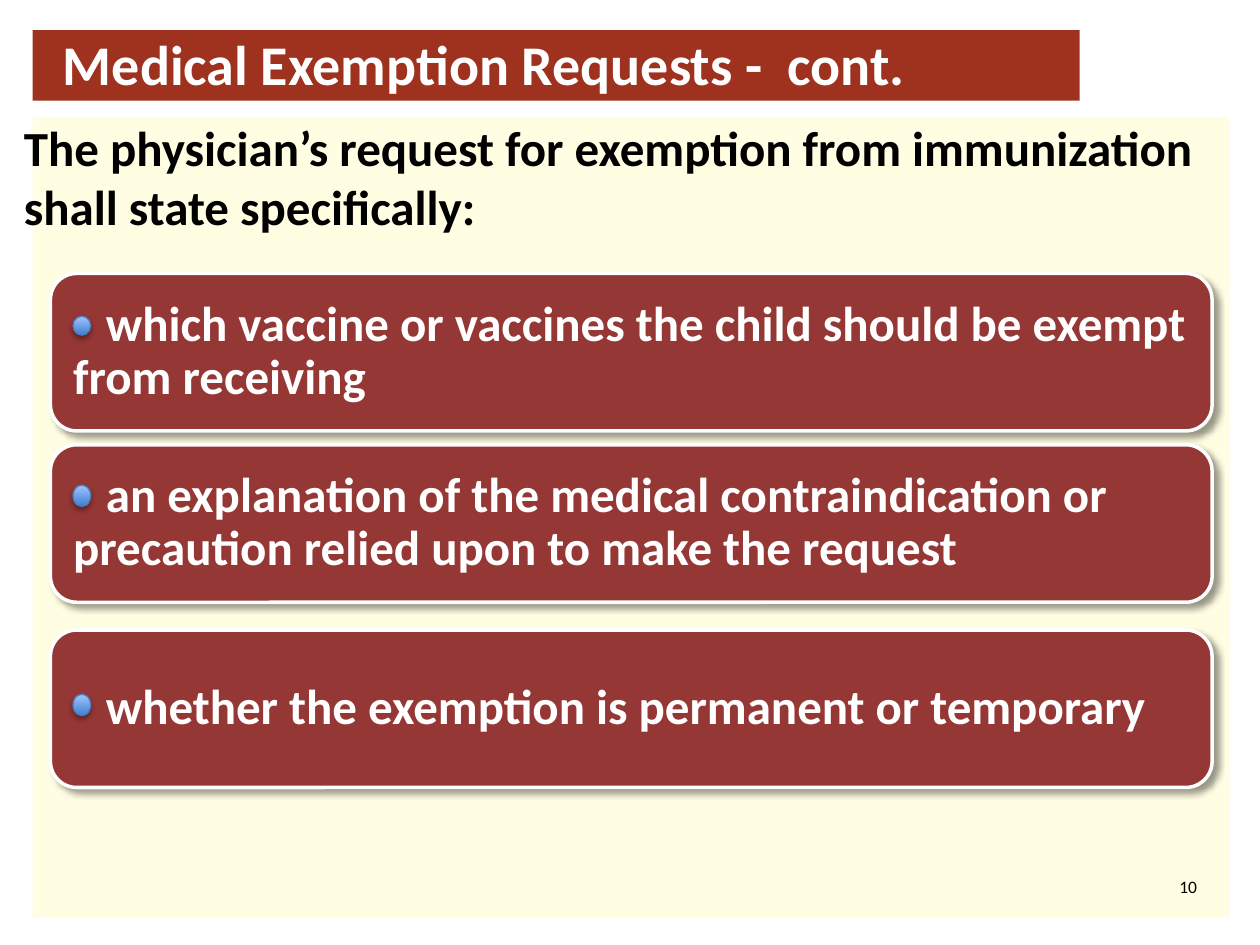
from lxml import etree
from pptx import Presentation
from pptx import util as u
from pptx.dml.color import RGBColor
from pptx.enum import shapes, text
from pptx.oxml.ns import qn

KIND = shapes.MSO_SHAPE
ANCHOR = text.MSO_ANCHOR
ALIGN = text.PP_ALIGN
WHITE, BLACK = "FFFFFF", "000000"
ITEMS = [
    (2.17, 2.51, 0.15, "which vaccine or vaccines the child should be exempt from receiving"),
    (3.53, 3.85, 0.17, "an explanation of the medical contraindication or precaution "
                       "relied upon to make the request"),
    (5, 5.51, 0.17, "whether the exemption is permanent or temporary"),
]


def paint(hue):
    """Return the colour for a hex string."""
    return RGBColor.from_string(hue)


def apply(thing, **vals):
    """Set each given value as an attribute of the thing."""
    for name, val in vals.items():
        setattr(thing, name, val)


def shade(shape, alpha, blur, dist, turn):
    """Give the shape a black outer shadow."""
    props = shape.shadow._element
    shape.shadow.inherit = False
    cast = etree.SubElement(
        props.find(qn("a:effectLst")), qn("a:outerShdw"),
        blurRad=str(u.Pt(blur)), dist=str(u.Pt(dist)),
        dir=str(turn * 60000), algn="ctr", rotWithShape="0")
    tone = etree.SubElement(cast, qn("a:srgbClr"), val=BLACK)
    etree.SubElement(tone, qn("a:alpha"), val=str(alpha * 1000))


def form(slide, kind, box, fill=None, line=None, width=0):
    """Add a preset shape with a flat fill and an optional line."""
    shape = slide.shapes.add_shape(kind, *map(u.Inches, box))
    shape.shadow.inherit = False
    if fill:
        shape.fill.solid()
        shape.fill.fore_color.rgb = paint(fill)
    if line:
        shape.line.color.rgb = paint(line)
        shape.line.width = u.Pt(width)
    else:
        shape.line.fill.background()
    return shape


def write(shape, words, size, hue, bold=True, pad=0, anchor=ANCHOR.TOP, **para):
    """Put one styled paragraph into the shape."""
    frame = shape.text_frame
    edge = u.Inches(pad)
    apply(frame, word_wrap=True, vertical_anchor=anchor, margin_left=edge,
          margin_top=edge, margin_right=edge, margin_bottom=edge)
    line = frame.paragraphs[0]
    apply(line, **{"alignment": ALIGN.LEFT, **para})
    run = line.add_run()
    run.text = words
    apply(run.font, name="Calibri", size=u.Pt(size), bold=bold)
    run.font.color.rgb = paint(hue)


def label(slide, box, *args, **vals):
    """Add a text box with one paragraph."""
    write(slide.shapes.add_textbox(*map(u.Inches, box)), *args, **vals)


def header(slide, box):
    """Draw the title bar and its title."""
    left, top, wide, high = box
    form(slide, KIND.RECTANGLE, box, "9F321E")
    label(slide, (left + 0.24, top + 0.01, wide - 0.28, high - 0.06),
          "Medical Exemption Requests -  cont.", 32, WHITE, anchor=ANCHOR.MIDDLE)


def panel(slide, box):
    """Draw the body panel with its lead text and page number."""
    left, top, wide, high = box
    form(slide, KIND.RECTANGLE, box, "FFFDE2")
    label(slide, (left - 0.07, top, wide + 0.06, high - 0.07),
          "The physician’s request for exemption from immunization "
          "shall state specifically:", 28, BLACK)
    label(slide, (left + wide - 0.64, top + high - 0.33, 0.38, 0.19),
          "10", 10, BLACK, bold=False, alignment=ALIGN.RIGHT)


def card(slide, box, words):
    """Draw one rounded card, leaving room for its dot."""
    shape = form(slide, KIND.ROUNDED_RECTANGLE, box, "953735", WHITE, 2)
    shade(shape, 40, 4, 3, 45)
    write(shape, words, 28, WHITE, pad=0.12, anchor=ANCHOR.MIDDLE, line_spacing=0.9)
    shape.text_frame.paragraphs[0]._p.get_or_add_pPr().set("indent", str(u.Inches(0.26)))


def dot(slide, box):
    """Draw one shaded blue dot."""
    shape = form(slide, KIND.OVAL, box, line="4B7EBC", width=0.75)
    shape.fill.gradient()
    shape.fill.gradient_angle = 90
    for stop, place, hue in zip(shape.fill.gradient_stops, (0, 1), ("3F80CE", "A4C4FF")):
        stop.position = place
        stop.color.rgb = paint(hue)
    shade(shape, 35, 3.1, 1.8, 90)


def main():
    """Build and save the slide."""
    deck = Presentation()
    apply(deck, slide_width=u.Inches(10), slide_height=u.Inches(7.5))
    slide = deck.slides.add_slide(deck.slide_layouts[6])
    panel(slide, (0.26, 0.93, 9.5, 6.35))
    header(slide, (0.26, 0.24, 8.31, 0.56))
    for top, mark, high, words in ITEMS:
        card(slide, (0.4, top, 9.22, 1.25), words)
        dot(slide, (0.58, mark, 0.14, high))
    deck.save("out.pptx")


if __name__ == "__main__":
    main()
